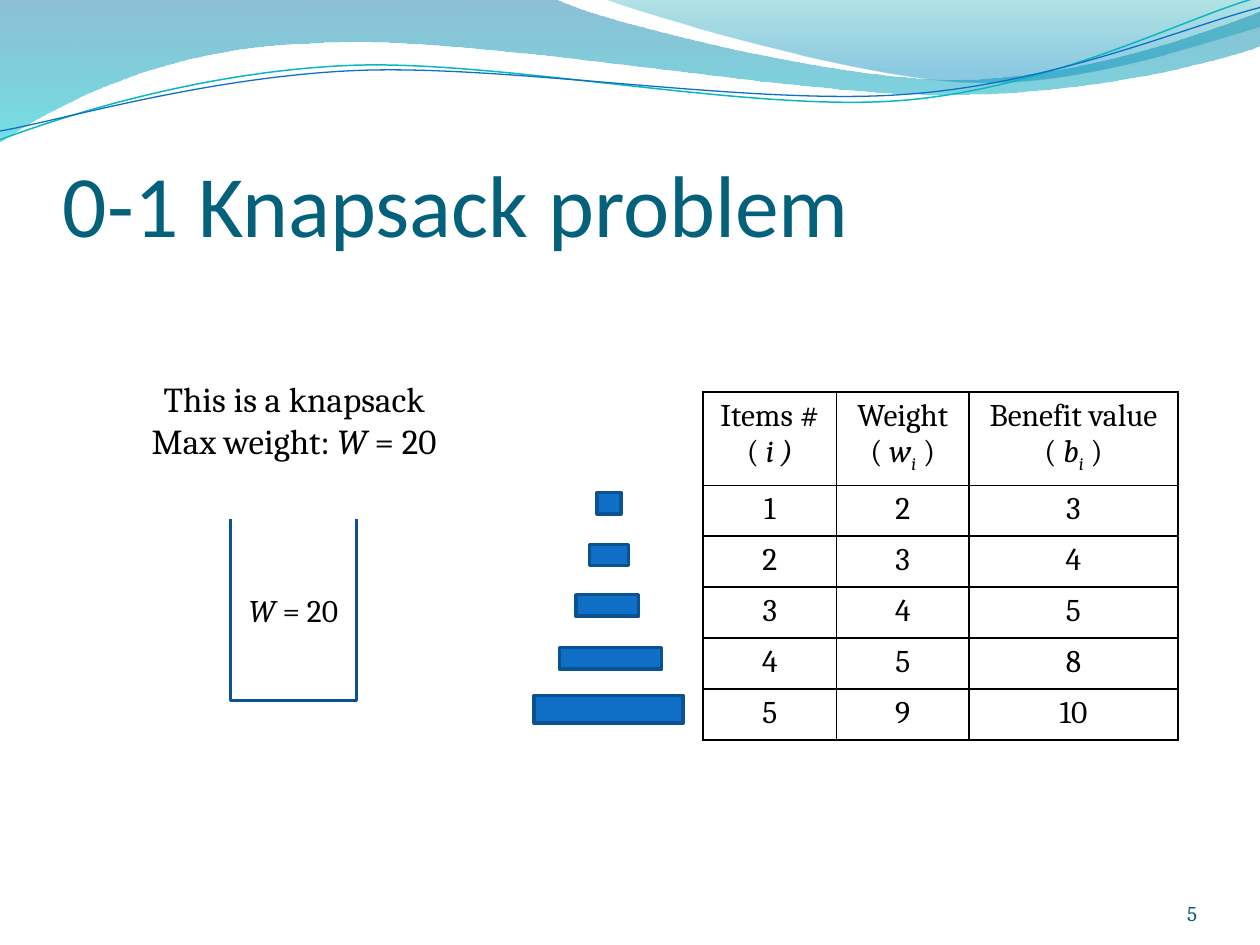
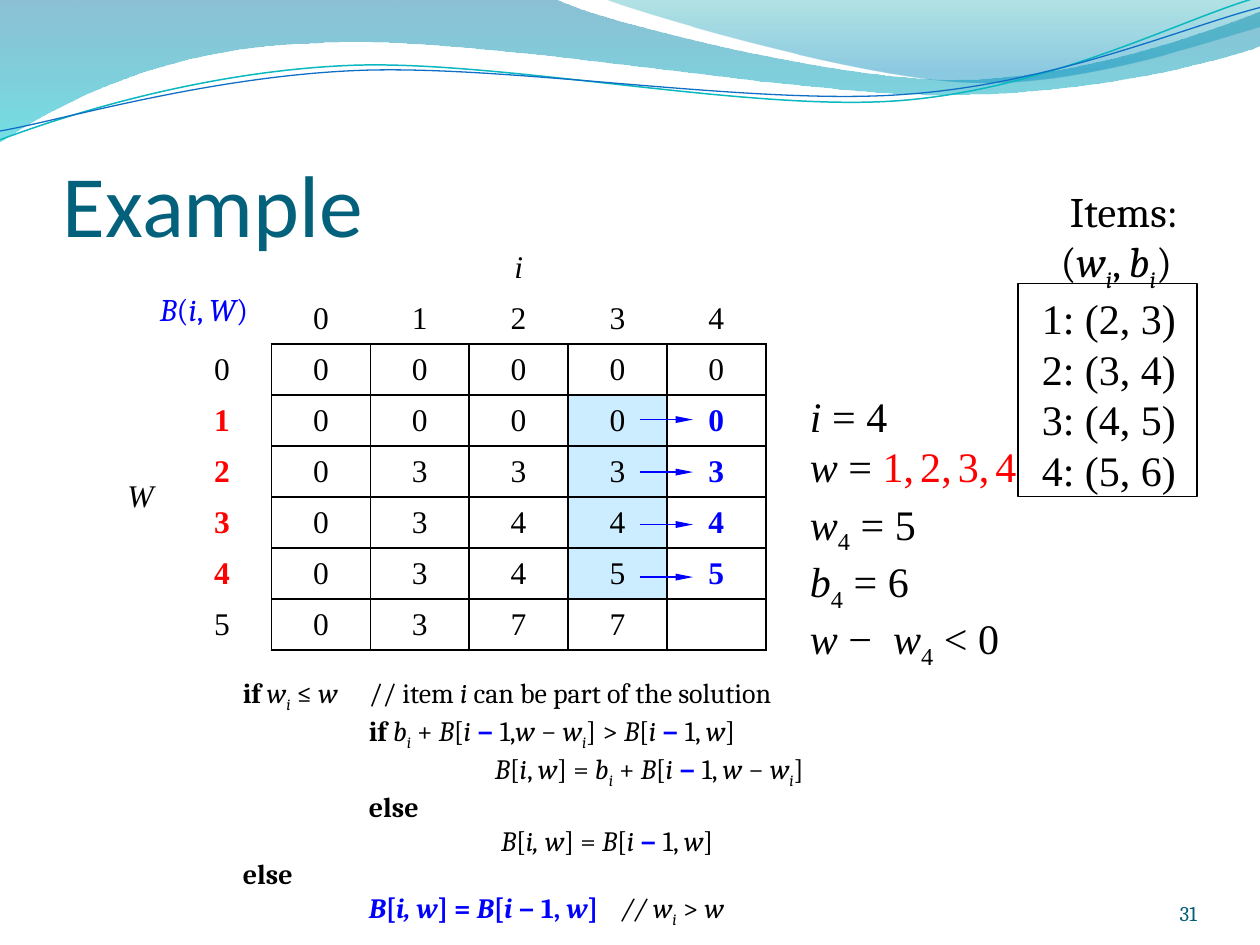
"""Build two slides on the 0-1 knapsack problem: the items and a worked table step."""
import pptx
import pptx.dml.color
import pptx.enum.shapes
import pptx.enum.text
import pptx.oxml
import pptx.oxml.ns
import pptx.util

Inches = pptx.util.Inches
Pt = pptx.util.Pt
ALIGN = pptx.enum.text.PP_ALIGN
ANCHOR = pptx.enum.text.MSO_ANCHOR
NAMESPACE = pptx.oxml.ns.nsdecls("a")

COLOURS = {
    "black": "000000", "title": "04617B", "number": "045D75",
    "blue": "0F6FC6", "dark blue": "0B5292", "teal": "0AB8BF",
    "red": "FF0000", "result": "0000FF", "previous": "CCECFF",
    "wave top": "0074A1", "wave bottom": "00C6CF",
    "crest top": "00A1A9", "crest bottom": "008BBF",
}
RGB = {name: pptx.dml.color.RGBColor.from_string(value) for name, value in COLOURS.items()}
FONTS = {
    "title": {"name": "Calibri", "size": Pt(50)},
    "number": {"name": "Cambria", "size": Pt(12)},
    "code": {"name": "Cambria", "size": Pt(16)},
    "label": {"name": "Cambria", "size": Pt(18)},
    "caption": {"name": "Cambria", "size": Pt(20)},
    "items": {"name": "Cambria", "size": Pt(24)},
    "grid": {"name": "Times New Roman", "size": Pt(18)},
    "values": {"name": "Times New Roman", "size": Pt(24)},
}
FLAGS = {"i": {"italic": True}, "b": {"bold": True}, "t": {"name": "Times New Roman"}}
FLAG_COLOURS = {"r": "red", "u": "result"}


def write_text(text_frame, lines, font, colour="black", align=ALIGN.LEFT):
    """Write lines in which {flags text} marks a run that differs from the base font."""
    for index, line in enumerate(lines):
        paragraph = text_frame.add_paragraph() if index else text_frame.paragraphs[0]
        paragraph.alignment = align
        for chunk in line.split("{"):
            styled, closed, plain = chunk.partition("}")
            flags, _, text = styled.partition(" ") if closed else ("", "", "")
            for run_flags, run_text in ((flags, text), ("", plain if closed else styled)):
                if not run_text:
                    continue
                run = paragraph.add_run()
                run.text = run_text
                values = dict(FONTS[font])
                run_colour = colour
                for flag in run_flags:
                    values.update(FLAGS.get(flag, {}))
                    run_colour = FLAG_COLOURS.get(flag, run_colour)
                if "s" in run_flags:
                    run._r.get_or_add_rPr().set("baseline", "-25000")
                for name, value in values.items():
                    setattr(run.font, name, value)
                run.font.color.rgb = RGB[run_colour]


def format_cell(cell, lines, font, sides, anchor, fill=None):
    """Write a centred cell with black borders on the given sides."""
    write_text(cell.text_frame, lines, font, align=ALIGN.CENTER)
    cell.vertical_anchor = anchor
    properties = cell._tc.get_or_add_tcPr()
    for side in sides:
        properties.append(pptx.oxml.parse_xml(
            f'<a:ln{side} {NAMESPACE} w="12700"><a:solidFill>'
            f'<a:srgbClr val="{COLOURS["black"]}"/></a:solidFill></a:ln{side}>'))
    if fill:
        cell.fill.solid()
        cell.fill.fore_color.rgb = RGB[fill]
    else:
        cell.fill.background()


WAVES = [
    {"steps": [(0, 0), (4.4, -0.01), (4.76, 0.17, 6.64, 0.63, 7.58, 0.63),
               (8.53, 0.63, 9.58, 0.26, 10, 0.09), (10.01, 0.36),
               (9.83, 0.44, 8.7, 0.76, 7.46, 0.75), (6.22, 0.75, 3.82, 0.28, 2.57, 0.34),
               (1.29, 0.36, 0.46, 0.83, -0.01, 1.13), (0, 0)],
     "stops": [(0, "wave top", 45), (1, "wave bottom", 55)]},
    {"steps": [(4.79, -0.01), (5.09, 0.11, 6.82, 0.62, 7.69, 0.65),
               (8.56, 0.69, 9.61, 0.32, 10, 0.21), (10, 0), (4.79, -0.01)],
     "stops": [(0, "crest top", 30), (0.8, "crest bottom", 45)]},
    {"steps": [(0, 1.11), (0.48, 0.93, 1.58, 0.57, 2.77, 0.52),
               (3.95, 0.47, 5.93, 0.89, 7.13, 0.8), (8.33, 0.71, 9.38, 0.15, 9.98, -0.02)],
     "line": ("teal", 0.85)},
    {"steps": [(0, 1.04), (0.47, 0.96, 1.64, 0.61, 2.83, 0.56),
               (4.03, 0.51, 5.97, 0.84, 7.17, 0.75), (8.36, 0.67, 9.41, 0.21, 10, 0.06)],
     "line": ("blue", 0.75)},
]

KNAPSACK_TEXT = [
    ((0.75, 2.95, 3.17, 0.77), "caption", "black", ALIGN.CENTER,
     ["This is a knapsack", "Max weight: {i W} = 20"]),
]
EXAMPLE_TEXT = [
    ((1.83, 5.31, 5.67, 2.02), "code", "black", ALIGN.LEFT, [
        "{b if}{i  w}{is i} ≤ {i w\t}// item {i i} can be part of the solution",
        "\t{b if }{i b}{is i} + {i B}[{i i}{bu  − }1,{i w }− {i w}{is i}] > {i B}[{i i}{bu  − }1, {i w}]",
        "\t\t{i B}[{i i}, {i w}] = {i b}{is i} + {i B}[{i i}{bu  − }1, {i w }− {i w}{is i}]",
        "\t{b else}",
        "\t\t{i  B}[{i i, w}] = {i B}[{i i}{bu  − }1, {i w}]",
        "{b else}",
        "\t{ibu B}{bu [}{ibu i, w}{bu ] = }{ibu B}{bu [}{ibu i}{bu  − 1, }{ibu w}{bu ]\t}"
        "{i // w}{is i} > {i w}"]),
    ((8.17, 1.42, 1.5, 2.52), "items", "black", ALIGN.LEFT,
     ["Items:", "({i w}{is i}, {i b}{is i})",
      "{t 1: (2, 3)}", "{t 2: (3, 4)}", "{t 3: (4, 5)}", "{t 4: (5, 6)}"]),
    ((6.33, 3.05, 2.08, 2.12), "values", "black", ALIGN.LEFT,
     ["{i i }= 4", "{i w }= {r 1,}{rs  }{r 2,}{rs  }{r 3,}{rs  }{r 4}",
      "{i w}{s 4} = 5", "{i b}{s 4} = 6", "{i w }−  {i w}{s 4} < 0"]),
    ((1.17, 2.25, 1, 0.4), "label", "result", ALIGN.LEFT, ["{i B}({i i}, {i W})"]),
]

presentation = pptx.Presentation()
presentation.slide_width = Inches(10)
presentation.slide_height = Inches(7.5)
knapsack_slide, example_slide = [
    presentation.slides.add_slide(presentation.slide_layouts[6]) for _ in range(2)]

for index, wave in enumerate(WAVES):
    points = [(Inches(step[axis]), Inches(step[axis + 1]))
              for step in wave["steps"] for axis in range(0, len(step), 2)]
    builder = knapsack_slide.shapes.build_freeform(*points[0])
    builder.add_line_segments(points[1:], close="stops" in wave)
    shape = builder.convert_to_shape()
    segments = iter(shape._element.xpath(".//a:lnTo"))
    for step in wave["steps"][1:]:
        segment = next(segments)
        if len(step) == 6:
            curve = pptx.oxml.parse_xml(f"<a:cubicBezTo {NAMESPACE}/>")
            segment.addprevious(curve)
            for control in (segment, next(segments), next(segments)):
                curve.append(control[0])
                control.getparent().remove(control)
    shape.shadow.inherit = False
    if "stops" in wave:
        shape.line.fill.background()
        shape.fill.gradient()
        shape.fill.gradient_angle = 270
        for stop, (position, colour, opacity) in zip(shape.fill.gradient_stops, wave["stops"]):
            stop.position = position
            stop.color.rgb = RGB[colour]
            stop._gs[0].append(pptx.oxml.parse_xml(
                f'<a:alpha {NAMESPACE} val="{opacity * 1000}"/>'))
    else:
        shape.fill.background()
        shape.line.color.rgb = RGB[wave["line"][0]]
        shape.line.width = Pt(wave["line"][1])
    shape._element.nvSpPr.cNvPr.set("id", str(20 + index))
    presentation.slide_master.shapes._spTree.append(shape._element)

for slide, title, number, texts in (
        (knapsack_slide, "0-1 Knapsack problem", "5", KNAPSACK_TEXT),
        (example_slide, "Example", "31", EXAMPLE_TEXT)):
    framed = [((0.5, 0.77, 9, 1.25), "title", "title", ALIGN.LEFT, [title]),
              ((8.67, 6.95, 0.83, 0.4), "number", "number", ALIGN.RIGHT, [number])]
    for area, font, colour, align, lines in framed + texts:
        text_frame = slide.shapes.add_textbox(*map(Inches, area)).text_frame
        text_frame.word_wrap = True
        if font in ("title", "number"):
            top_margin = Inches(0.05 if font == "title" else 0)
            for name, value in {"margin_left": 0, "margin_right": 0, "margin_bottom": 0,
                                "margin_top": top_margin,
                                "vertical_anchor": ANCHOR.BOTTOM}.items():
                setattr(text_frame, name, value)
        write_text(text_frame, lines, font, colour, align)
        if font == "items":
            text_frame.paragraphs[0].alignment = ALIGN.CENTER
            text_frame.paragraphs[1]._p.get_or_add_pPr().set("marL", str(Inches(0.15)))
        if font == "code":
            stops = "".join(f'<a:tab pos="{Inches(stop)}" algn="l"/>' for stop in (1, 2, 3))
            for paragraph in text_frame.paragraphs:
                paragraph._p.get_or_add_pPr().append(pptx.oxml.parse_xml(
                    f"<a:tabLst {NAMESPACE}>{stops}</a:tabLst>"))

tables = []
row_height = 3.24 / 8
for slide, left, top, height, widths, row_count in (
        (knapsack_slide, 5.58, 3.11, 2.73, [1.06, 1.05, 1.66], 6),
        (example_slide, 0.86, 1.92, 3.24, [0.51] + [4.71 / 6] * 6, 8)):
    frame = slide.shapes.add_table(row_count, len(widths), Inches(left), Inches(top),
                                   Inches(sum(widths)), Inches(height))
    table = frame.table
    table.first_row = table.horz_banding = False
    table._tbl.tblPr[0].text = "{2D5ABB26-0587-4C30-8999-92F81FD0307C}"
    for column, width in zip(table.columns, widths):
        column.width = Inches(width)
    for row in table.rows:
        row.height = Inches(row_height)
    frame.height = Inches(height)
    tables.append(table)
items_table, benefit_table = tables

item_rows = [[["Items #", "( {i i )}"], ["Weight", "( {i w}{is i} )"],
              ["Benefit value", "( {i b}{is i} )"]]]
for item, (weight, benefit) in enumerate([(2, 3), (3, 4), (4, 5), (5, 8), (9, 10)], 1):
    item_rows.append([[str(value)] for value in (item, weight, benefit)])
for row, cells in enumerate(item_rows):
    for column, lines in enumerate(cells):
        format_cell(items_table.cell(row, column), lines, "label", "LRTB", ANCHOR.TOP)

for area in ((4.74, 3.91, 0.19, 0.17), (4.68, 4.32, 0.31, 0.17), (4.57, 4.72, 0.5, 0.17),
             (4.44, 5.14, 0.81, 0.17), (4.24, 5.52, 1.18, 0.22)):
    bar = knapsack_slide.shapes.add_shape(
        pptx.enum.shapes.MSO_SHAPE.RECTANGLE, *map(Inches, area))
    bar.shadow.inherit = False
    bar.fill.solid()
    bar.fill.fore_color.rgb = RGB["blue"]
    bar.line.color.rgb = RGB["dark blue"]
    bar.line.width = Pt(2)

builder = knapsack_slide.shapes.build_freeform(Inches(1.83), Inches(4.12))
builder.add_line_segments([(Inches(x), Inches(y)) for x, y in
                           [(1.83, 5.56), (2.83, 5.56), (2.83, 4.12)]], close=False)
knapsack = builder.convert_to_shape()
knapsack.shadow.inherit = False
knapsack.fill.background()
knapsack.line.color.rgb = RGB["dark blue"]
knapsack.line.width = Pt(2)
knapsack.text_frame.vertical_anchor = ANCHOR.MIDDLE
write_text(knapsack.text_frame, ["{i W} = 20"], "label", align=ALIGN.CENTER)

benefits = ["00000", "00000", "03333", "03444", "03455", "0377"]
cell_texts = {(0, 2): "{i i}", (2, 0): "{i W}"}
for item in range(5):
    cell_texts[1, item + 2] = str(item)
for capacity, values in enumerate(benefits):
    active = 1 <= capacity <= 4
    cell_texts[capacity + 2, 1] = f"{{br {capacity}}}" if active else str(capacity)
    for item, value in enumerate(values):
        cell_texts[capacity + 2, item + 2] = f"{{bu {value}}}" if active and item == 4 else value
for row in range(8):
    for column in range(7):
        text = cell_texts.get((row, column))
        format_cell(benefit_table.cell(row, column), [text] if text else [], "grid",
                    "LRTB" if row >= 2 and column >= 2 else "", ANCHOR.MIDDLE,
                    "previous" if column == 5 and 3 <= row <= 6 else None)
benefit_table.cell(0, 2).merge(benefit_table.cell(0, 6))
benefit_table.cell(2, 0).merge(benefit_table.cell(7, 0))

items_frame = example_slide.shapes.add_shape(
    pptx.enum.shapes.MSO_SHAPE.RECTANGLE, Inches(8.08), Inches(2.25), Inches(1.42), Inches(1.69))
items_frame.shadow.inherit = False
items_frame.fill.background()
items_frame.line.color.rgb = RGB["black"]
items_frame.line.width = Pt(1)

for index in range(4):
    y = Inches(3.33 + 1.25 / 3 * index)
    arrow = example_slide.shapes.add_connector(
        pptx.enum.shapes.MSO_CONNECTOR.STRAIGHT, Inches(5.08), y, Inches(5.5), y)
    arrow.line.color.rgb = RGB["result"]
    arrow.line.width = Pt(0.75)
    arrow.line._get_or_add_ln().append(pptx.oxml.parse_xml(
        f'<a:tailEnd {NAMESPACE} type="triangle" w="sm" len="lg"/>'))
    arrow._element.spPr.append(pptx.oxml.parse_xml(f"<a:effectLst {NAMESPACE}/>"))

presentation.save("out.pptx")
